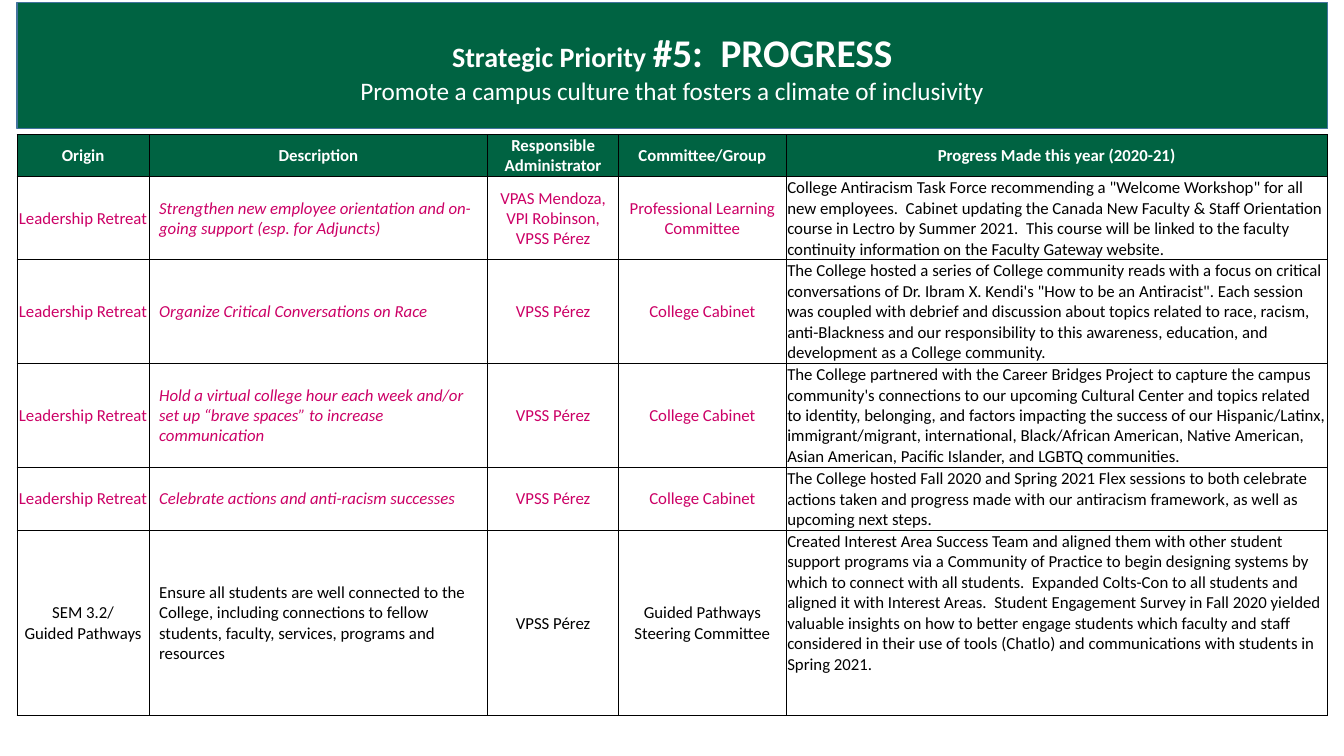
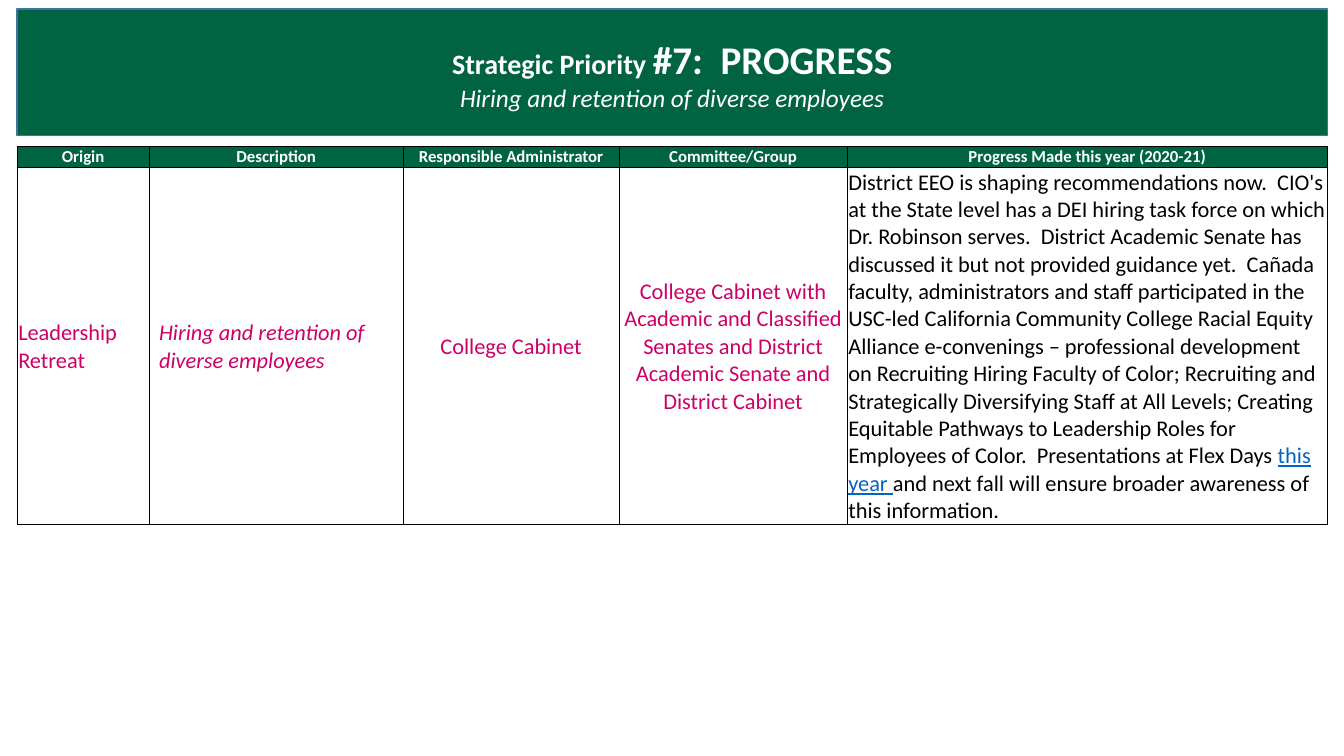
import dataclasses

import lxml.etree
import pptx
import pptx.dml.color
import pptx.enum.shapes
import pptx.enum.text
import pptx.oxml.ns
import pptx.util

Cm = pptx.util.Cm
Pt = pptx.util.Pt
Align = pptx.enum.text.PP_ALIGN
Anchor = pptx.enum.text.MSO_ANCHOR


@dataclasses.dataclass(frozen=True)
class Theme:
    font: str = "Calibri"
    green: str = "006342"
    band_edge: str = "43739E"
    white: str = "FFFFFF"
    black: str = "000000"
    magenta: str = "CC0066"
    link: str = "0563C1"
    lead_size: int = 20
    title_size: int = 28
    subtitle_size: int = 18
    header_size: int = 12
    edge_width: float = 1
    grid_width: float = 0.5


THEME = Theme()
LEFT, WIDTH = 0.43, 33.02
BAND_HEIGHT = 3.18
HEADERS = ["Origin", "Description", "Responsible Administrator",
           "Committee/Group", "Progress Made this year (2020-21)"]
DESCRIPTION, PROGRESS = 1, 4


@dataclasses.dataclass(frozen=True)
class Initiative:
    entries: tuple
    height: float
    color: str = THEME.magenta
    progress_anchor: Anchor = Anchor.BOTTOM


@dataclasses.dataclass(frozen=True)
class Priority:
    number: int
    goal: str
    goal_italic: bool
    band_top: float
    table_top: float
    columns: tuple
    header_height: float
    body_size: int
    origin_align: Align
    initiatives: tuple


INCLUSIVITY = Priority(
    number=5,
    goal="Promote a campus culture that fosters a climate of inclusivity",
    goal_italic=False,
    band_top=0.06,
    table_top=3.39,
    columns=(3.33, 8.53, 3.3, 4.22, 13.64),
    header_height=1.06,
    body_size=12,
    origin_align=Align.CENTER,
    initiatives=(
        Initiative((
            "Leadership Retreat",
            "Strengthen new employee orientation and on-going support (esp. for Adjuncts)",
            "VPAS Mendoza, VPI Robinson, VPSS Pérez",
            "Professional Learning Committee",
            ("College Antiracism Task Force recommending a \"Welcome Workshop\" for all new "
             "employees.  Cabinet updating the Canada New Faculty & Staff Orientation course in "
             "Course by Summer 2021.  This course will be linked to the faculty continuity "
             "information on the Faculty Gateway website.").replace("in Course", "in Lectro"),
        ), 2.07),
        Initiative((
            "Leadership Retreat",
            "Organize Critical Conversations on Race",
            "VPSS Pérez",
            "College Cabinet",
            "The College hosted a series of College community reads with a focus on critical "
            "conversations of Dr. Ibram X. Kendi's \"How to be an Antiracist\". Each session was "
            "coupled with debrief and discussion about topics related to race, racism, "
            "anti-Blackness and our responsibility to this awareness, education, and "
            "development as a College community.",
        ), 2.6),
        Initiative((
            "Leadership Retreat",
            "Hold a virtual college hour each week and/or set up “brave spaces” to increase "
            "communication",
            "VPSS Pérez",
            "College Cabinet",
            "The College partnered with the Career Bridges Project to capture the campus "
            "community's connections to our upcoming Cultural Center and topics related to "
            "identity, belonging, and factors impacting the success of our Hispanic/Latinx, "
            "immigrant/migrant, international, Black/African American, Native American, Asian "
            "American, Pacific Islander, and LGBTQ communities.",
        ), 2.6),
        Initiative((
            "Leadership Retreat",
            "Celebrate actions and anti-racism successes",
            "VPSS Pérez",
            "College Cabinet",
            "The College hosted Fall 2020 and Spring 2021 Flex sessions to both celebrate "
            "actions taken and progress made with our antiracism framework, as well as upcoming "
            "next steps.",
        ), 1.59),
        Initiative((
            "SEM 3.2/\nGuided Pathways",
            "Ensure all students are well connected to the College, including connections to "
            "fellow students, faculty, services, programs and resources",
            "VPSS Pérez",
            "Guided Pathways Steering Committee",
            "Created Interest Area Success Team and aligned them with other student support "
            "programs via a Community of Practice to begin designing systems by which to connect "
            "with all students.  Expanded Colts-Con to all students and aligned it with Interest "
            "Areas.  Student Engagement Survey in Fall 2020 yielded valuable insights on how to "
            "better engage students which faculty and staff considered in their use of tools "
            "(Chatlo) and communications with students in Spring 2021.",
        ), 4.67, THEME.black, Anchor.TOP),
    ),
)

HIRING = Priority(
    number=7,
    goal="Hiring and retention of diverse employees",
    goal_italic=True,
    band_top=0.23,
    table_top=3.69,
    columns=(3.33, 6.4, 5.44, 5.75, 12.1),
    header_height=0.53,
    body_size=16,
    origin_align=Align.LEFT,
    initiatives=(
        Initiative((
            "Leadership Retreat",
            "Hiring and retention of diverse employees",
            "College Cabinet",
            "College Cabinet with Academic and Classified Senates and District Academic Senate "
            "and District Cabinet",
            ("District EEO is shaping recommendations now.  CIO's at the State level has a DEI "
             "hiring task force on which Dr. Robinson serves.  District Academic Senate has "
             "discussed it but not provided guidance yet.  Cañada faculty, administrators and "
             "staff participated in the USC-led California Community College Racial Equity "
             "Alliance e-convenings – professional development on Recruiting Hiring Faculty of "
             "Color; Recruiting and Strategically Diversifying Staff at All Levels; Creating "
             "Equitable Pathways to Leadership Roles for Employees of Color.  Presentations at "
             "Flex Days ",
             "this year ",
             "and next fall will ensure broader awareness of this information."),
        ), 8.97, progress_anchor=Anchor.MIDDLE),
    ),
)


def rgb(color):
    return pptx.dml.color.RGBColor.from_string(color)


def style_run(run, size, color, bold=False, italic=False, underline=False):
    run.font.name = THEME.font
    run.font.size = Pt(size)
    run.font.color.rgb = rgb(color)
    run.font.bold = bold
    run.font.italic = italic
    run.font.underline = underline


def add_priority_band(slide, priority, left, top, width, height):
    band = slide.shapes.add_shape(pptx.enum.shapes.MSO_SHAPE.RECTANGLE,
                                  Cm(left), Cm(top), Cm(width), Cm(height))
    band.shadow.inherit = False
    band.fill.solid()
    band.fill.fore_color.rgb = rgb(THEME.green)
    band.line.color.rgb = rgb(THEME.band_edge)
    band.line.width = Pt(THEME.edge_width)
    frame = band.text_frame
    frame.word_wrap = True
    frame.vertical_anchor = Anchor.MIDDLE
    frame.margin_top = Cm(0.21)
    frame.text = f"Strategic Priority \n{priority.goal}"
    heading, goal = frame.paragraphs
    heading.add_run().text = f"#{priority.number}:  PROGRESS"
    lead, title = heading.runs
    style_run(lead, THEME.lead_size, THEME.white, bold=True)
    style_run(title, THEME.title_size, THEME.white, bold=True)
    style_run(goal.runs[0], THEME.subtitle_size, THEME.white, italic=priority.goal_italic)
    for paragraph in frame.paragraphs:
        paragraph.alignment = Align.CENTER


def draw_grid(cell):
    properties = cell._tc.get_or_add_tcPr()
    for side in ("a:lnL", "a:lnR", "a:lnT", "a:lnB"):
        edge = lxml.etree.SubElement(properties, pptx.oxml.ns.qn(side),
                                     w=str(Pt(THEME.grid_width)))
        fill = lxml.etree.SubElement(edge, pptx.oxml.ns.qn("a:solidFill"))
        lxml.etree.SubElement(fill, pptx.oxml.ns.qn("a:srgbClr"), val=THEME.black)


def prepare_cell(cell, anchor, margins):
    draw_grid(cell)
    cell.vertical_anchor = anchor
    cell.margin_left, cell.margin_top, cell.margin_right, cell.margin_bottom = map(Cm, margins)


def fill_header(cell, label):
    prepare_cell(cell, Anchor.MIDDLE, (0, 0, 0, 0))
    cell.fill.solid()
    cell.fill.fore_color.rgb = rgb(THEME.green)
    paragraph = cell.text_frame.paragraphs[0]
    paragraph.text = label
    paragraph.alignment = Align.CENTER
    style_run(paragraph.runs[0], THEME.header_size, THEME.white, bold=True)


def fill_entry(cell, entry, column, initiative, priority):
    anchor = initiative.progress_anchor if column == PROGRESS else Anchor.MIDDLE
    indent = 0.25 if column == DESCRIPTION else 0.03
    prepare_cell(cell, anchor, (indent, 0.03, 0.03, 0))
    cell.fill.background()
    color = THEME.black if column == PROGRESS else initiative.color
    italic = column == DESCRIPTION and color == THEME.magenta
    align = {0: priority.origin_align, DESCRIPTION: Align.LEFT,
             PROGRESS: Align.LEFT}.get(column, Align.CENTER)
    opening, *rest = (entry,) if isinstance(entry, str) else entry
    cell.text_frame.text = opening
    for passage in rest:
        cell.text_frame.paragraphs[-1].add_run().text = passage
    for paragraph in cell.text_frame.paragraphs:
        paragraph.alignment = align
        for position, run in enumerate(paragraph.runs):
            linked = position == 1
            style_run(run, priority.body_size, THEME.link if linked else color,
                      italic=italic, underline=linked)


def add_progress_table(slide, priority, left, top, width):
    heights = [priority.header_height] + [item.height for item in priority.initiatives]
    table = slide.shapes.add_table(len(heights), len(HEADERS), Cm(left), Cm(top),
                                   Cm(width), Cm(sum(heights))).table
    table.first_row = False
    table.horz_banding = False
    for column, column_width in zip(table.columns, priority.columns):
        column.width = Cm(column_width)
    for row, height in zip(table.rows, heights):
        row.height = Cm(height)
    for column, label in enumerate(HEADERS):
        fill_header(table.cell(0, column), label)
    for row, initiative in enumerate(priority.initiatives, 1):
        for column, entry in enumerate(initiative.entries):
            fill_entry(table.cell(row, column), entry, column, initiative, priority)


def add_priority_slide(deck, priority):
    slide = deck.slides.add_slide(deck.slide_layouts[6])
    add_priority_band(slide, priority, LEFT, priority.band_top, WIDTH, BAND_HEIGHT)
    add_progress_table(slide, priority, LEFT, priority.table_top, WIDTH)


def main():
    deck = pptx.Presentation()
    deck.slide_width, deck.slide_height = Cm(33.87), Cm(19.05)
    for priority in (INCLUSIVITY, HIRING):
        add_priority_slide(deck, priority)
    deck.save("out.pptx")


if __name__ == "__main__":
    main()
